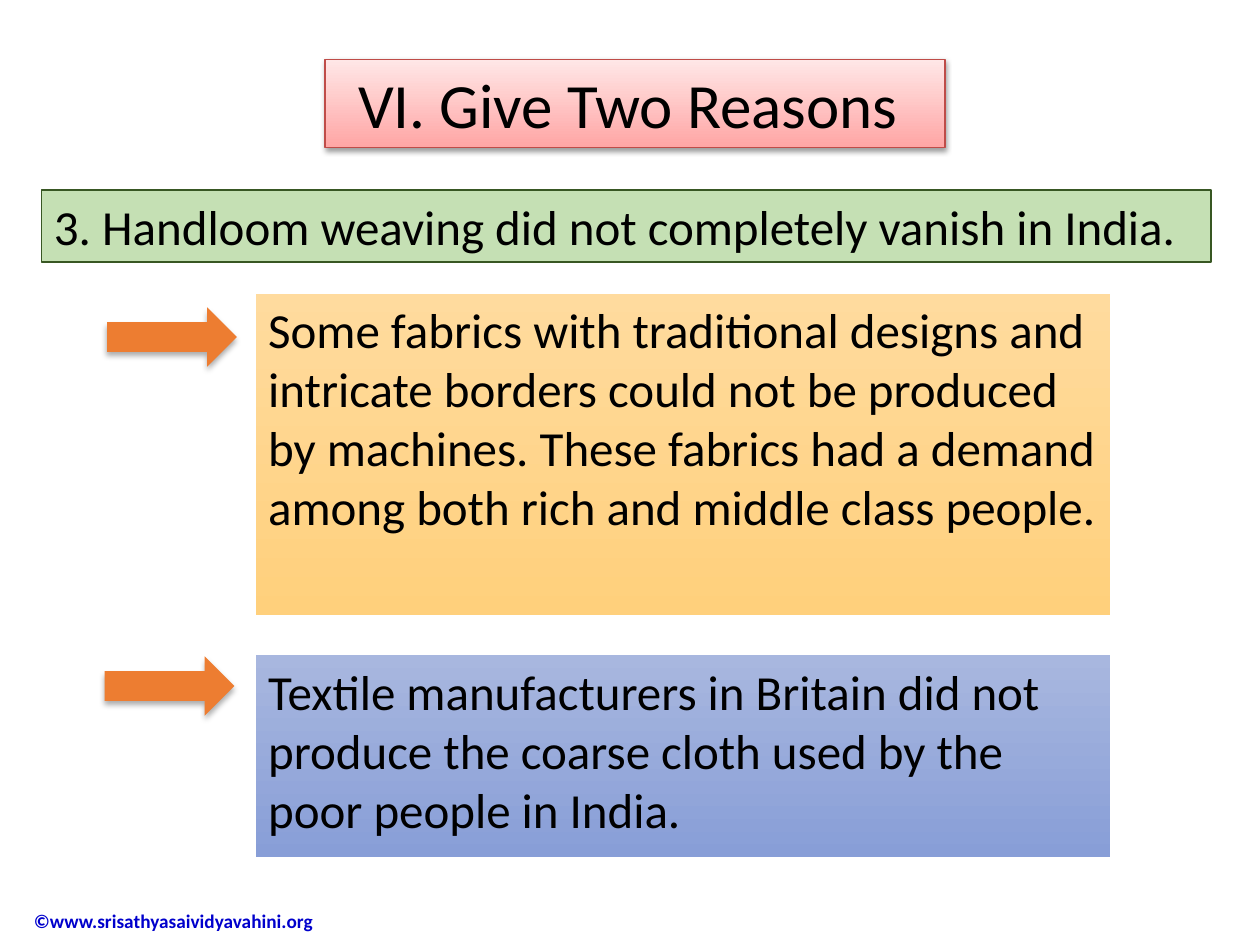
from pptx import Presentation
from pptx.dml.color import RGBColor
from pptx.enum.shapes import MSO_SHAPE
from pptx.enum.text import MSO_ANCHOR, MSO_AUTO_SIZE
from pptx.oxml.ns import qn
from pptx.util import Inches, Pt
from lxml.etree import SubElement

HUES = {
    "black": "000000", "link": "0000CC", "arrow": "ED7D31",
    "green": "C5E0B4", "forest": "385723",
    "pink": "FFE7E7", "rose": "FFA6A5", "red": "BF4C48",
    "cream": "FFDB9E", "amber": "FFD07C",
    "sky": "A8B7DF", "blue": "889ED7",
}


def hue(name):
    return RGBColor.from_string(HUES[name])


def place(shape, left, top, width, height):
    shape.left, shape.top = Inches(left), Inches(top)
    shape.width, shape.height = Inches(width), Inches(height)


def paint(shape, *names):
    if len(names) == 1:
        shape.fill.solid()
        shape.fill.fore_color.rgb = hue(names[0])
        return
    shape.fill.gradient()
    shape.fill.gradient_angle = 270
    for stop, name in zip(shape.fill.gradient_stops, names):
        stop.color.rgb = hue(name)


def edge(shape, name, width):
    shape.line.color.rgb = hue(name)
    shape.line.width = Pt(width)


def shade(shape, blur, dist, alpha):
    shape.shadow.inherit = False
    effects = shape.element.spPr.find(qn("a:effectLst"))
    outer = SubElement(effects, qn("a:outerShdw"), blurRad=str(Pt(blur)),
                       dist=str(Pt(dist)), dir="5400000", rotWithShape="0")
    color = SubElement(outer, qn("a:srgbClr"), val=HUES["black"])
    SubElement(color, qn("a:alpha"), val=str(alpha * 1000))


def write(shape, text, size, name="black", bold=False):
    frame = shape.text_frame
    frame.text = text
    frame.word_wrap = True
    frame.auto_size = MSO_AUTO_SIZE.NONE
    font = frame.paragraphs[0].runs[0].font
    font.name, font.size, font.bold = "Calibri", Pt(size), bold
    font.color.rgb = hue(name)


def add_title(slide, text):
    title = slide.shapes.title
    place(title, 2.58, 0.47, 4.92, 0.7)
    paint(title, "pink", "rose")
    edge(title, "red", 0.75)
    shade(title, 3.1, 1.6, 38)
    write(title, text, 36)
    title.text_frame.vertical_anchor = MSO_ANCHOR.MIDDLE


def add_box(slide, area, text, size=28, **style):
    box = slide.shapes.add_textbox(*map(Inches, area))
    write(box, text, size, **style)
    return box


def add_arrow(slide, left, top):
    arrow = slide.shapes.add_shape(
        MSO_SHAPE.RIGHT_ARROW, Inches(left), Inches(top), Inches(1.03), Inches(0.47))
    paint(arrow, "arrow")
    arrow.line.fill.background()
    shade(arrow, 3.5, 2.2, 32)


def main():
    deck = Presentation()
    deck.slide_width, deck.slide_height = Inches(10), Inches(7.5)
    slide = deck.slides.add_slide(deck.slide_layouts[5])

    add_title(slide, "VI. Give Two Reasons ")
    claim = add_box(slide, (0.33, 1.51, 9.28, 0.57),
                    "3. Handloom weaving did not completely vanish in India.")
    paint(claim, "green")
    edge(claim, "forest", 1)

    reasons = [
        (2.33, 2.55, ("cream", "amber"), (0.85, 2.44),
         "Some fabrics with traditional designs and intricate borders could not be "
         "produced by machines. These fabrics had a demand among both rich and "
         "middle class people."),
        (5.2, 1.6, ("sky", "blue"), (0.83, 5.21),
         "Textile manufacturers in Britain did not produce the coarse cloth used by "
         "the poor people in India."),
    ]
    for top, height, blend, spot, text in reasons:
        paint(add_box(slide, (2.03, top, 6.78, height), text), *blend)
        add_arrow(slide, *spot)

    credit = add_box(slide, (0.17, 7.1, 2.52, 0.41), "©www.srisathyasaividyavahini.org",
                     11, name="link", bold=True)
    credit.text_frame.vertical_anchor = MSO_ANCHOR.MIDDLE
    deck.save("out.pptx")


if __name__ == "__main__":
    main()
